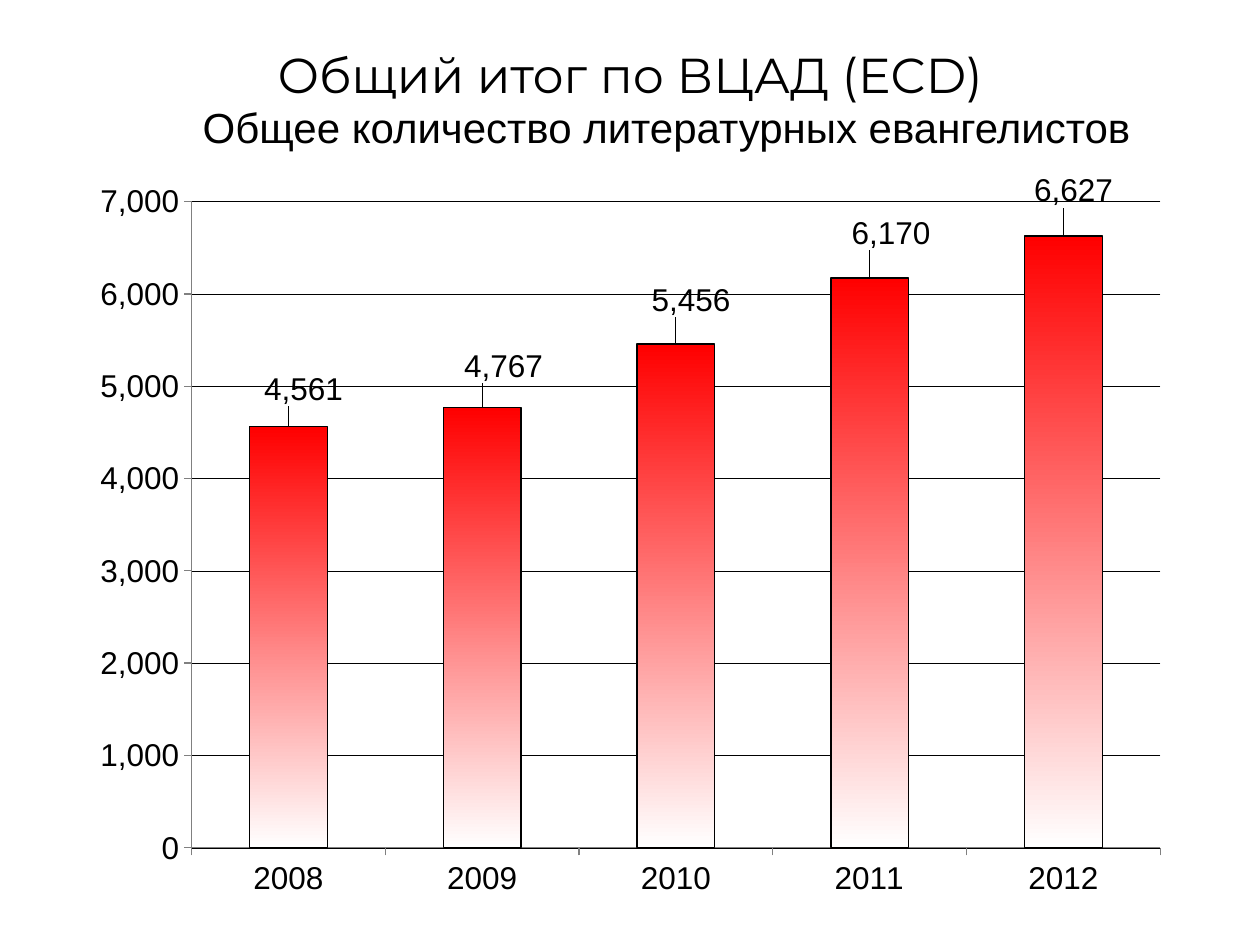
from lxml import etree
from pptx import Presentation
from pptx.chart.data import CategoryChartData
from pptx.dml.color import RGBColor
from pptx.enum.chart import XL_CHART_TYPE, XL_LABEL_POSITION, XL_TICK_MARK
from pptx.enum.text import MSO_ANCHOR, PP_ALIGN
from pptx.oxml.ns import qn
from pptx.util import Inches, Pt

COLUMNS = XL_CHART_TYPE.COLUMN_CLUSTERED
OUTSIDE_END = XL_LABEL_POSITION.OUTSIDE_END
TICK_OUTSIDE = XL_TICK_MARK.OUTSIDE
CENTER = PP_ALIGN.CENTER
TOP = MSO_ANCHOR.TOP

TITLE = "Общий итог по ВЦАД (ECD)"
SUBTITLE = "Общее количество литературных евангелистов"
# Year, evangelists, label shift right and down in inches
DATA = [
    ("2008", 4561, 0.12, -0.12),
    ("2009", 4767, 0.17, -0.15),
    ("2010", 5456, 0.12, -0.17),
    ("2011", 6170, 0.17, -0.18),
    ("2012", 6627, 0.08, -0.18),
]
NUMBER_FORMAT = "#,##0"

THEME = {
    "title_font": "Montserrat", "font": "Arial",
    "title_size": Pt(28), "subtitle_size": Pt(24), "chart_size": Pt(18),
    "text": RGBColor(0, 0, 0), "axis": RGBColor(0x80, 0x80, 0x80),
    "bar_top": RGBColor(0xFF, 0, 0), "bar_bottom": RGBColor(0xFF, 0xFF, 0xFF),
}

# Left, top, width, height in inches
TITLE_BOX = (0.5, 0.3, 9, 1.25)
SUBTITLE_BOX = (1.08, 0.76, 8.42, 0.5)
CHART_BOX = (0.62, 1.33, 8.76, 5.88)
PLOT_BOX = (1.52, 1.6, 7.69, 5.13)


def style_font(font, name, size):
    font.name, font.size, font.bold = name, size, False
    font.color.rgb = THEME["text"]


def write_line(tf, text, name, size):
    tf.word_wrap = True
    tf.vertical_anchor = TOP
    p = tf.paragraphs[0]
    p.alignment = CENTER
    r = p.add_run()
    r.text = text
    style_font(r.font, name, size)


def manual_layout(**values):
    """Build a c:layout element; values are fractions of the chart."""
    layout = etree.Element(qn("c:layout"))
    manual = etree.SubElement(layout, qn("c:manualLayout"))
    for tag, value in values.items():
        etree.SubElement(manual, qn(f"c:{tag}")).set("val", str(value))
    return layout


def place_plot(chart):
    left, top, width, height = CHART_BOX
    x, y, w, h = PLOT_BOX
    plot_area = chart.plots[0]._element.getparent()
    for old in plot_area.findall(qn("c:layout")):
        plot_area.remove(old)
    plot_area.insert(0, manual_layout(
        layoutTarget="inner", xMode="edge", yMode="edge",
        x=(x - left) / width, y=(y - top) / height,
        w=w / width, h=h / height))


def style_axes(chart):
    for axis in (chart.category_axis, chart.value_axis):
        axis.major_tick_mark = TICK_OUTSIDE
        axis.format.line.color.rgb = THEME["axis"]
        axis.format.line.width = Pt(0.75)
        style_font(axis.tick_labels.font, THEME["font"], THEME["chart_size"])
    axis = chart.value_axis
    axis.minimum_scale, axis.maximum_scale, axis.major_unit = 0, 7000, 1000
    axis.tick_labels.number_format = NUMBER_FORMAT
    axis.tick_labels.number_format_is_linked = False
    axis.major_gridlines.format.line.color.rgb = THEME["text"]
    axis.major_gridlines.format.line.width = Pt(0.25)


def style_bars(series):
    fill = series.format.fill
    fill.gradient()
    fill.gradient_angle = 270
    ends = ((0, THEME["bar_top"]), (1, THEME["bar_bottom"]))
    for stop, (position, color) in zip(fill.gradient_stops, ends):
        stop.position = position
        stop.color.rgb = color
    series.format.line.color.rgb = THEME["text"]
    series.format.line.width = Pt(0.75)


def label_bars(series):
    labels = series.data_labels
    labels.show_value = True
    labels.number_format = NUMBER_FORMAT
    labels.number_format_is_linked = False
    style_font(labels.font, THEME["font"], THEME["chart_size"])
    for i, (_, _, dx, dy) in enumerate(DATA):
        label = series.points[i].data_label
        style_font(label.font, THEME["font"], THEME["chart_size"])
        label.position = OUTSIDE_END
    for item, (_, _, dx, dy) in zip(labels._element.findall(qn("c:dLbl")), DATA):
        item.insert(1, manual_layout(x=dx / CHART_BOX[2], y=dy / CHART_BOX[3]))


def add_column_chart(slide):
    data = CategoryChartData(number_format=NUMBER_FORMAT)
    data.categories = [row[0] for row in DATA]
    data.add_series("Series 1", [row[1] for row in DATA])
    box = map(Inches, CHART_BOX)
    chart = slide.shapes.add_chart(COLUMNS, *box, data).chart
    chart.has_legend = False
    chart.has_title = False
    style_font(chart.font, THEME["font"], THEME["chart_size"])
    plot = chart.plots[0]
    plot.gap_width = 150
    plot.vary_by_categories = False
    place_plot(chart)
    style_axes(chart)
    style_bars(plot.series[0])
    label_bars(plot.series[0])


def main():
    prs = Presentation()
    prs.slide_width, prs.slide_height = Inches(10), Inches(7.5)
    slide = prs.slides.add_slide(prs.slide_layouts[5])
    add_column_chart(slide)

    title = slide.shapes.title
    title.left, title.top, title.width, title.height = map(Inches, TITLE_BOX)
    write_line(title.text_frame, TITLE, THEME["title_font"], THEME["title_size"])

    subtitle = slide.shapes.add_textbox(*map(Inches, SUBTITLE_BOX))
    write_line(subtitle.text_frame, SUBTITLE, THEME["font"], THEME["subtitle_size"])

    prs.save("out.pptx")


if __name__ == "__main__":
    main()
